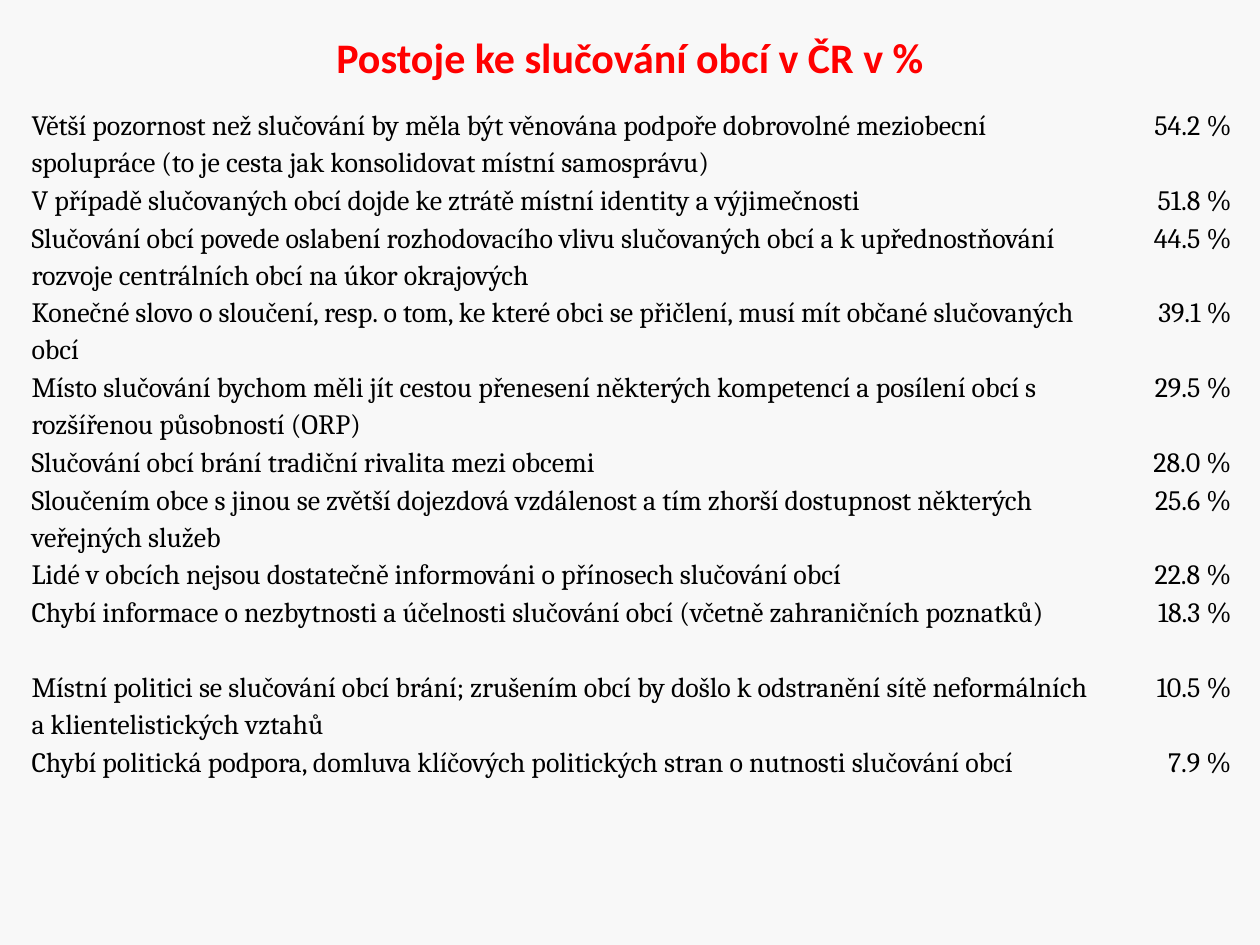
from pptx import Presentation
from pptx.dml.color import RGBColor
from pptx.enum.text import MSO_ANCHOR, PP_ALIGN
from pptx.oxml.ns import qn
from pptx.util import Pt

LEFT, CENTER, RIGHT = PP_ALIGN.LEFT, PP_ALIGN.CENTER, PP_ALIGN.RIGHT
TOP, MIDDLE = MSO_ANCHOR.TOP, MSO_ANCHOR.MIDDLE
TITLE_ONLY = 5
NO_GRID = "{2D5ABB26-0587-4C30-8999-92F81FD0307C}"
COLORS = {"back": "F8F8F8", "title": "FF0000", "text": "000000"}
TITLE = {"name": "Calibri", "size": Pt(24), "bold": True}
BODY = {"name": "Cambria", "size": Pt(16), "bold": False}
INSETS = {
    "margin_left": Pt(3.6),
    "margin_right": Pt(3.6),
    "margin_top": 0,
    "margin_bottom": 0,
    "vertical_anchor": TOP,
}
LINE = 21.4
WIDTHS = (615.6, 8.6, 67.2)
ALIGNS = (LEFT, LEFT, RIGHT)

ROWS = [
    (2, "Větší pozornost než slučování by měla být věnována podpoře dobrovolné meziobecní "
        "spolupráce (to je cesta jak konsolidovat místní samosprávu)", "54.2 %"),
    (1, "V případě slučovaných obcí dojde ke ztrátě místní identity a výjimečnosti", "51.8 %"),
    (2, "Slučování obcí povede oslabení rozhodovacího vlivu slučovaných obcí a k upřednostňování "
        "rozvoje centrálních obcí na úkor okrajových", "44.5 %"),
    (2, "Konečné slovo o sloučení, resp. o tom, ke které obci se přičlení, musí mít občané "
        "slučovaných obcí", "39.1 %"),
    (2, "Místo slučování bychom měli jít cestou přenesení některých kompetencí a posílení obcí s "
        "rozšířenou působností (ORP)", "29.5 %"),
    (1, "Slučování obcí brání tradiční rivalita mezi obcemi", "28.0 %"),
    (2, "Sloučením obce s jinou se zvětší dojezdová vzdálenost a tím zhorší dostupnost některých "
        "veřejných služeb", "25.6 %"),
    (1, "Lidé v obcích nejsou dostatečně informováni o přínosech slučování obcí", "22.8 %"),
    (2, "Chybí informace o nezbytnosti a účelnosti slučování obcí (včetně zahraničních poznatků)",
     "18.3 %"),
    (2, "Místní politici se slučování obcí brání; zrušením obcí by došlo k odstranění sítě "
        "neformálních a klientelistických vztahů", "10.5 %"),
    (2, "Chybí politická podpora, domluva klíčových politických stran o nutnosti slučování obcí",
     "7.9 %"),
    (1, "", ""),
    (1, "", ""),
]


def set_all(item, values):
    for name, value in values.items():
        setattr(item, name, value)


def write(frame, text, font, color, align, space):
    para = frame.paragraphs[0]
    para.alignment = align
    para.line_spacing = space
    run = para.add_run()
    run.text = text
    set_all(run.font, font)
    run.font.color.rgb = RGBColor.from_string(COLORS[color])


def add_title(slide, text):
    title = slide.shapes.title
    set_all(title, {"left": Pt(36), "top": Pt(9.4), "width": Pt(648), "height": Pt(45.4)})
    title.text_frame.vertical_anchor = MIDDLE
    write(title.text_frame, text, TITLE, "title", CENTER, 1.0)


def fill_cell(cell, text, align):
    set_all(cell, INSETS)
    cell.fill.background()
    write(cell.text_frame, text, BODY, "text", align, 1.15 if text else 1.0)


def add_grid(slide):
    high = LINE * sum(row[0] for row in ROWS)
    frame = slide.shapes.add_table(
        len(ROWS), len(WIDTHS), Pt(14.4), Pt(60.5), Pt(sum(WIDTHS)), Pt(high)
    )
    table = frame.table
    set_all(table, {"first_row": False, "horz_banding": False})
    for style in frame.element.iter(qn("a:tableStyleId")):
        style.text = NO_GRID
    for col, width in zip(table.columns, WIDTHS):
        col.width = Pt(width)
    for row, (lines, claim, share) in zip(table.rows, ROWS):
        row.height = Pt(LINE * lines)
        for cell, text, align in zip(row.cells, (claim, "", share), ALIGNS):
            fill_cell(cell, text, align)


def main():
    deck = Presentation()
    set_all(deck, {"slide_width": Pt(720), "slide_height": Pt(540)})
    slide = deck.slides.add_slide(deck.slide_layouts[TITLE_ONLY])
    back = slide.background.fill
    back.solid()
    back.fore_color.rgb = RGBColor.from_string(COLORS["back"])
    add_title(slide, "Postoje ke slučování obcí v ČR v %")
    add_grid(slide)
    deck.save("out.pptx")


if __name__ == "__main__":
    main()
